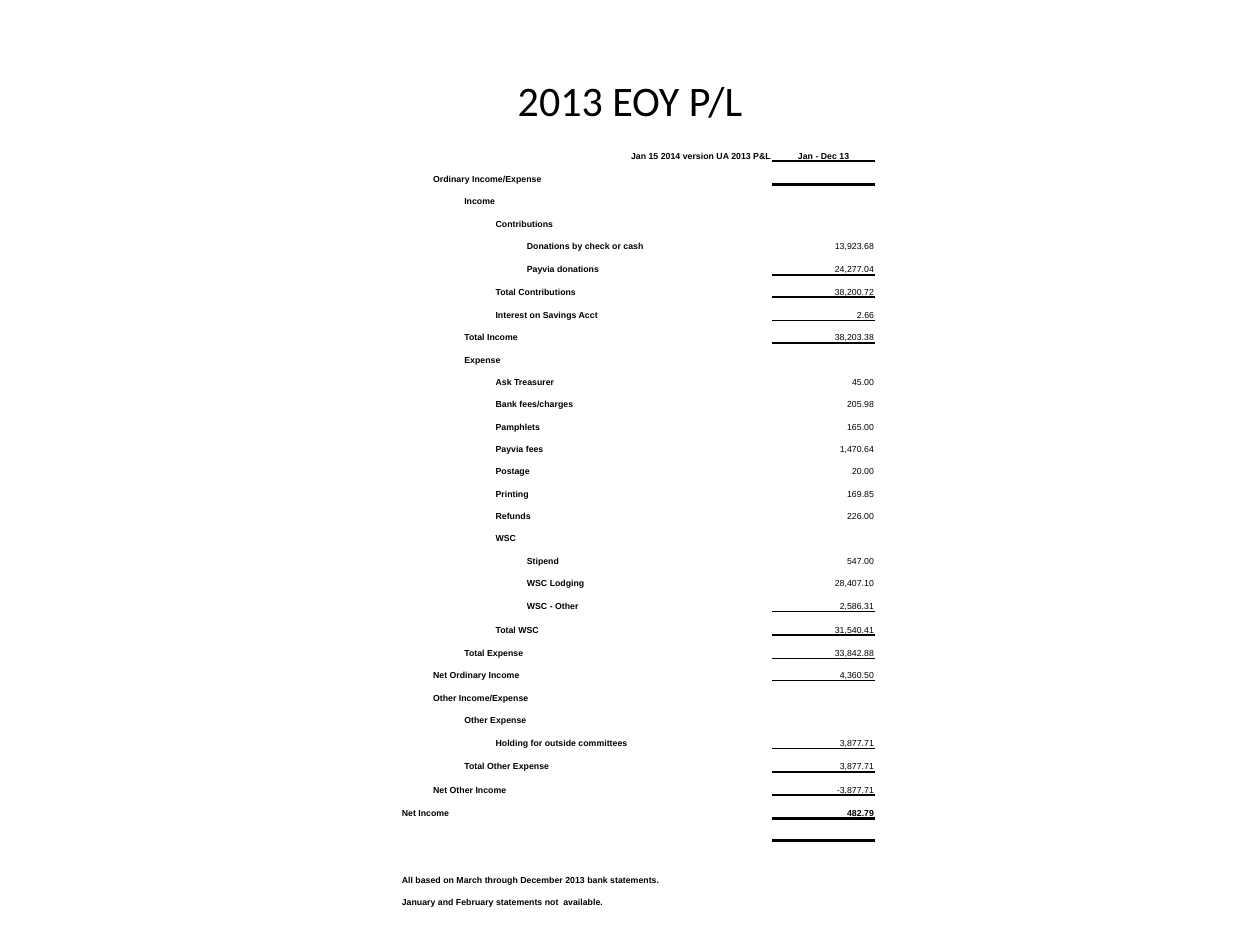
import pptx
import pptx.util
import pptx.dml.color
import pptx.enum.text
import pptx.oxml.ns
from dataclasses import dataclass
from lxml import etree

Cm, Pt = pptx.util.Cm, pptx.util.Pt
ALIGN = pptx.enum.text.PP_ALIGN
ANCHOR = pptx.enum.text.MSO_ANCHOR
qn = pptx.oxml.ns.qn


@dataclass(frozen=True)
class Theme:
    ink: str = "000000"
    title_font: str = "Calibri"
    table_font: str = "Arial"
    title_size: int = 24
    table_size: int = 5


THEME = Theme()
NO_STYLE_NO_GRID = "{2D5ABB26-0587-4C30-8999-92F81FD0307C}"
INDENT, LABEL_COL, AMOUNT_COL = 0.63, 4, 5
COL_WIDTHS = [INDENT] * LABEL_COL + [4.97, 2.07]
HEADER_HEIGHT, ROW_HEIGHT, RULED_HEIGHT = 0.61, 0.45, 0.47

HEADER = ("Jan 15 2014 version UA 2013 P&L", "Jan - Dec 13")
HEADER_RULE = 1.5

# Indent level, label, amount, width of the rule below the amount
LINES = [
    (1, "Ordinary Income/Expense", "", 0),
    (2, "Income", "", 0),
    (3, "Contributions", "", 0),
    (4, "Donations by check or cash", "13,923.68", 0),
    (4, "Payvia donations", "24,277.04", 1),
    (3, "Total Contributions", "38,200.72", 0),
    (3, "Interest on Savings Acct", "2.66", 1),
    (2, "Total Income", "38,203.38", 0),
    (2, "Expense", "", 0),
    (3, "Ask Treasurer", "45.00", 0),
    (3, "Bank fees/charges", "205.98", 0),
    (3, "Pamphlets", "165.00", 0),
    (3, "Payvia fees", "1,470.64", 0),
    (3, "Postage", "20.00", 0),
    (3, "Printing", "169.85", 0),
    (3, "Refunds", "226.00", 0),
    (3, "WSC", "", 0),
    (4, "Stipend", "547.00", 0),
    (4, "WSC Lodging", "28,407.10", 0),
    (4, "WSC - Other", "2,586.31", 1),
    (3, "Total WSC", "31,540.41", 1),
    (2, "Total Expense", "33,842.88", 1),
    (1, "Net Ordinary Income", "4,360.50", 0),
    (1, "Other Income/Expense", "", 0),
    (2, "Other Expense", "", 0),
    (3, "Holding for outside committees", "3,877.71", 1),
    (2, "Total Other Expense", "3,877.71", 1),
    (1, "Net Other Income", "-3,877.71", 1),
    (0, "Net Income", "482.79", 2),
]
SPACER_ROWS = 2
NOTES = [
    "All based on March through December 2013 bank statements.",
    "January and February statements not  available.",
]


def add_run(p, text, font, size, bold=False):
    r = p.add_run()
    r.text = text
    r.font.name, r.font.size, r.font.bold = font, Pt(size), bold
    r.font.color.rgb = pptx.dml.color.RGBColor.from_string(THEME.ink)


def add_title(s, text):
    sp = s.shapes.title
    sp.left, sp.top, sp.width, sp.height = Cm(1.27), Cm(0.76), Cm(22.86), Cm(2.49)
    tf = sp.text_frame
    tf.vertical_anchor = ANCHOR.MIDDLE
    p = tf.paragraphs[0]
    p.alignment = ALIGN.CENTER
    add_run(p, text, THEME.title_font, THEME.title_size)


def set_rule(cell, edge, width):
    """Draw a solid line on one edge of a cell: lnT or lnB."""
    tc_pr = cell._tc.get_or_add_tcPr()
    ln = etree.SubElement(tc_pr, qn(f"a:{edge}"), w=str(Pt(width)))
    fill = etree.SubElement(ln, qn("a:solidFill"))
    etree.SubElement(fill, qn("a:srgbClr"), val=THEME.ink)


def fill_cell(cell, text, align=ALIGN.LEFT, bold=True):
    p = cell.text_frame.paragraphs[0]
    p.alignment = align
    add_run(p, text, THEME.table_font, THEME.table_size, bold)


def format_cell(cell):
    cell.margin_left = cell.margin_right = cell.margin_top = Cm(0.02)
    cell.margin_bottom = 0
    cell.vertical_anchor = ANCHOR.BOTTOM
    cell.fill.background()
    # The end mark's size keeps empty cells from stretching their row
    p = cell.text_frame.paragraphs[0]
    etree.SubElement(p._p, qn("a:endParaRPr"), sz=str(THEME.table_size * 100))


def add_statement_table(s):
    # Rule widths by row; a ruled row is slightly taller
    rules = [HEADER_RULE] + [line[3] for line in LINES]
    rules += [0] * (SPACER_ROWS + len(NOTES))
    heights = [RULED_HEIGHT if rule else ROW_HEIGHT for rule in rules]
    heights[0], heights[1] = HEADER_HEIGHT, RULED_HEIGHT
    frame = s.shapes.add_table(len(rules), len(COL_WIDTHS), Cm(8.08), Cm(2.64),
                               Cm(sum(COL_WIDTHS)), Cm(sum(heights)))
    table = frame.table
    table.first_row = table.horz_banding = False
    next(frame.element.iter(qn("a:tableStyleId"))).text = NO_STYLE_NO_GRID
    for col, width in zip(table.columns, COL_WIDTHS):
        col.width = Cm(width)
    for row, height in zip(table.rows, heights):
        row.height = Cm(height)

    # Header
    fill_cell(table.cell(0, LABEL_COL), HEADER[0], ALIGN.RIGHT)
    fill_cell(table.cell(0, AMOUNT_COL), HEADER[1], ALIGN.CENTER)

    # Statement lines
    for row, (level, label, amount, _) in enumerate(LINES, 1):
        cell = table.cell(row, level)
        last_col = LABEL_COL if level else LABEL_COL - 1
        if level < last_col:
            cell.merge(table.cell(row, last_col))
        fill_cell(cell, label)
        if amount:
            fill_cell(table.cell(row, AMOUNT_COL), amount, ALIGN.RIGHT, bold=level == 0)

    # Notes
    for row, note in enumerate(NOTES, len(rules) - len(NOTES)):
        cell = table.cell(row, 0)
        cell.merge(table.cell(row, AMOUNT_COL))
        fill_cell(cell, note)

    # Rules, shared by the amount cells above and below
    for row, rule in enumerate(rules):
        cell = table.cell(row, AMOUNT_COL)
        if row and rules[row - 1]:
            set_rule(cell, "lnT", rules[row - 1])
        if rule:
            set_rule(cell, "lnB", rule)
    for row in range(len(rules)):
        for col in range(len(COL_WIDTHS)):
            format_cell(table.cell(row, col))


def main():
    prs = pptx.Presentation()
    prs.slide_width, prs.slide_height = Cm(25.4), Cm(19.05)
    s = prs.slides.add_slide(prs.slide_layouts[5])
    add_title(s, "2013 EOY P/L")
    add_statement_table(s)
    prs.save("out.pptx")


if __name__ == "__main__":
    main()
